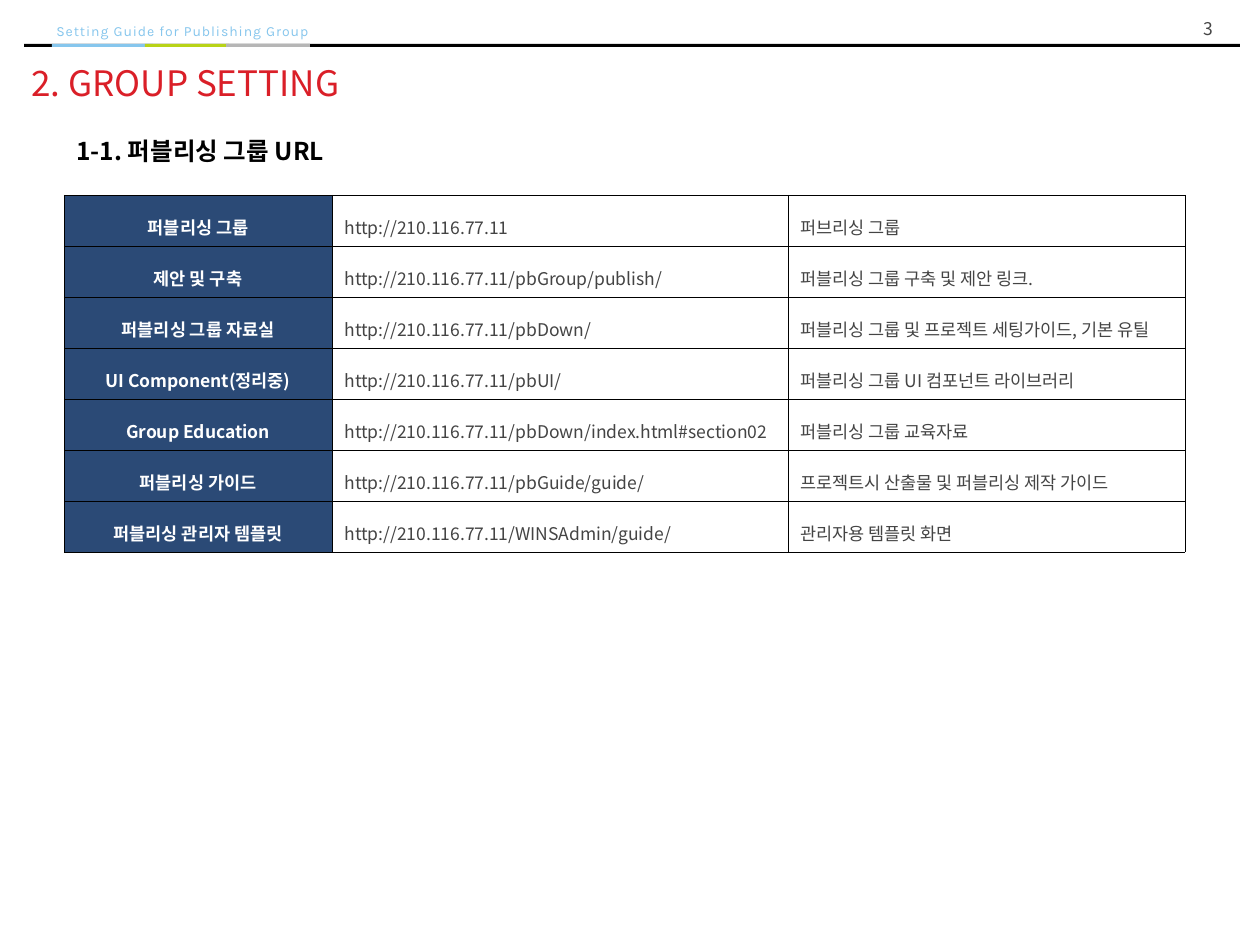
import pptx
import pptx.util
import pptx.dml.color
import pptx.enum.shapes
import pptx.enum.text
import pptx.oxml
import pptx.oxml.ns
from dataclasses import dataclass

PX = 914400 / 126
SANS = "Noto Sans CJK KR"
COLORS = {
    "black": "000000", "white": "FFFFFF", "sky": "86C6ED", "lime": "B8D317",
    "gray": "B6B6B6", "page": "464646", "body": "444444", "navy": "2B4A76",
    "red": "DA1F28",
}
ALIGN = pptx.enum.text.PP_ALIGN
ANCHOR = pptx.enum.text.MSO_ANCHOR


@dataclass
class Bar:
    x: int
    w: int
    color: str


@dataclass
class Label:
    text: str
    x: int
    y: int
    w: int
    h: int
    size: int
    color: str
    font: str = SANS
    bold: bool = False
    align: ALIGN = ALIGN.LEFT
    anchor: ANCHOR = ANCHOR.TOP
    spacing: int = 0


@dataclass
class Link:
    name: str
    url: str
    note: str


BAR_Y, BAR_H = 44, 3
BARS = [
    Bar(24, 1216, "black"),
    Bar(52, 101, "sky"),
    Bar(145, 84, "lime"),
    Bar(226, 84, "gray"),
]
LABELS = [
    Label("3", 982, 10, 244, 37, 10, "page", align=ALIGN.RIGHT, anchor=ANCHOR.MIDDLE),
    Label("Setting Guide for Publishing Group", 44, 16, 375, 30, 8, "sky",
          font="Karla", spacing=50),
    Label("2. GROUP SETTING", 19, 55, 1206, 55, 20, "red"),
    Label("1-1. 퍼블리싱 그룹 URL", 64, 130, 1121, 43, 14, "black", bold=True),
]
TABLE_X, TABLE_Y, ROW_H = 64, 195, 51
COL_WIDTHS = [268, 456, 397]
HOST = "http://210.116.77.11"
LINKS = [
    Link("퍼블리싱 그룹", HOST, "퍼브리싱 그룹"),
    Link("제안 및 구축", HOST + "/pbGroup/publish/", "퍼블리싱 그룹 구축 및 제안 링크."),
    Link("퍼블리싱 그룹 자료실", HOST + "/pbDown/",
         "퍼블리싱 그룹 및 프로젝트 세팅가이드, 기본 유틸"),
    Link("UI Component(정리중)", HOST + "/pbUI/", "퍼블리싱 그룹 UI 컴포넌트 라이브러리"),
    Link("Group Education", HOST + "/pbDown/index.html#section02",
         "퍼블리싱 그룹 교육자료"),
    Link("퍼블리싱 가이드", HOST + "/pbGuide/guide/",
         "프로젝트시 산출물 및 퍼블리싱 제작 가이드"),
    Link("퍼블리싱 관리자 템플릿", HOST + "/WINSAdmin/guide/", "관리자용 템플릿 화면"),
]


def px(n: int) -> int:
    return pptx.util.Emu(round(n * PX))


def rgb(name: str) -> pptx.dml.color.RGBColor:
    return pptx.dml.color.RGBColor.from_string(COLORS[name])


def format_run(r, size: int, color: str, font: str, bold: bool) -> None:
    r.font.size = pptx.util.Pt(size)
    r.font.bold = bold
    r.font.color.rgb = rgb(color)
    r.font.name = font
    ea = pptx.oxml.parse_xml(f'<a:ea {pptx.oxml.ns.nsdecls("a")} typeface="{font}"/>')
    r.font._element.find(pptx.oxml.ns.qn("a:latin")).addnext(ea)


def draw_bar(s, bar: Bar) -> None:
    sp = s.shapes.add_shape(pptx.enum.shapes.MSO_SHAPE.RECTANGLE,
                            px(bar.x), px(BAR_Y), px(bar.w), px(BAR_H))
    sp.shadow.inherit = False
    sp.fill.solid()
    sp.fill.fore_color.rgb = rgb(bar.color)
    sp.line.fill.background()


def draw_label(s, label: Label) -> None:
    sp = s.shapes.add_textbox(px(label.x), px(label.y), px(label.w), px(label.h))
    tf = sp.text_frame
    tf.word_wrap = True
    tf.vertical_anchor = label.anchor
    tf.text = label.text
    p = tf.paragraphs[0]
    p.alignment = label.align
    r = p.runs[0]
    format_run(r, label.size, label.color, label.font, label.bold)
    if label.spacing:
        r.font._element.set("spc", str(label.spacing))


def set_borders(cell) -> None:
    tc_pr = cell._tc.get_or_add_tcPr()
    for i, side in enumerate("LRTB"):
        tc_pr.insert(i, pptx.oxml.parse_xml(
            f'<a:ln{side} {pptx.oxml.ns.nsdecls("a")} w="3175"><a:solidFill>'
            f'<a:srgbClr val="{COLORS["black"]}"/></a:solidFill></a:ln{side}>'))


def fill_cell(cell, text: str, header: bool) -> None:
    cell.fill.solid()
    cell.fill.fore_color.rgb = rgb("navy" if header else "white")
    set_borders(cell)
    cell.vertical_anchor = ANCHOR.MIDDLE
    cell.text_frame.text = text
    p = cell.text_frame.paragraphs[0]
    p.alignment = ALIGN.CENTER if header else ALIGN.LEFT
    p.line_spacing = 1.5
    format_run(p.runs[0], 10, "white" if header else "body", SANS, header)


def draw_links(s, links: list[Link]) -> None:
    table = s.shapes.add_table(len(links), len(COL_WIDTHS), px(TABLE_X), px(TABLE_Y),
                               px(sum(COL_WIDTHS)), px(ROW_H * len(links))).table
    table.first_row = False
    table.first_col = True
    table.horz_banding = False
    for column, width in zip(table.columns, COL_WIDTHS):
        column.width = px(width)
    for i, link in enumerate(links):
        table.rows[i].height = px(ROW_H)
        for j, text in enumerate((link.name, link.url, link.note)):
            fill_cell(table.cell(i, j), text, header=j == 0)


def main() -> None:
    prs = pptx.Presentation()
    prs.slide_width, prs.slide_height = px(1260), px(945)
    s = prs.slides.add_slide(prs.slide_layouts[6])
    for bar in BARS:
        draw_bar(s, bar)
    draw_links(s, LINKS)
    for label in LABELS:
        draw_label(s, label)
    prs.save("out.pptx")


if __name__ == "__main__":
    main()
